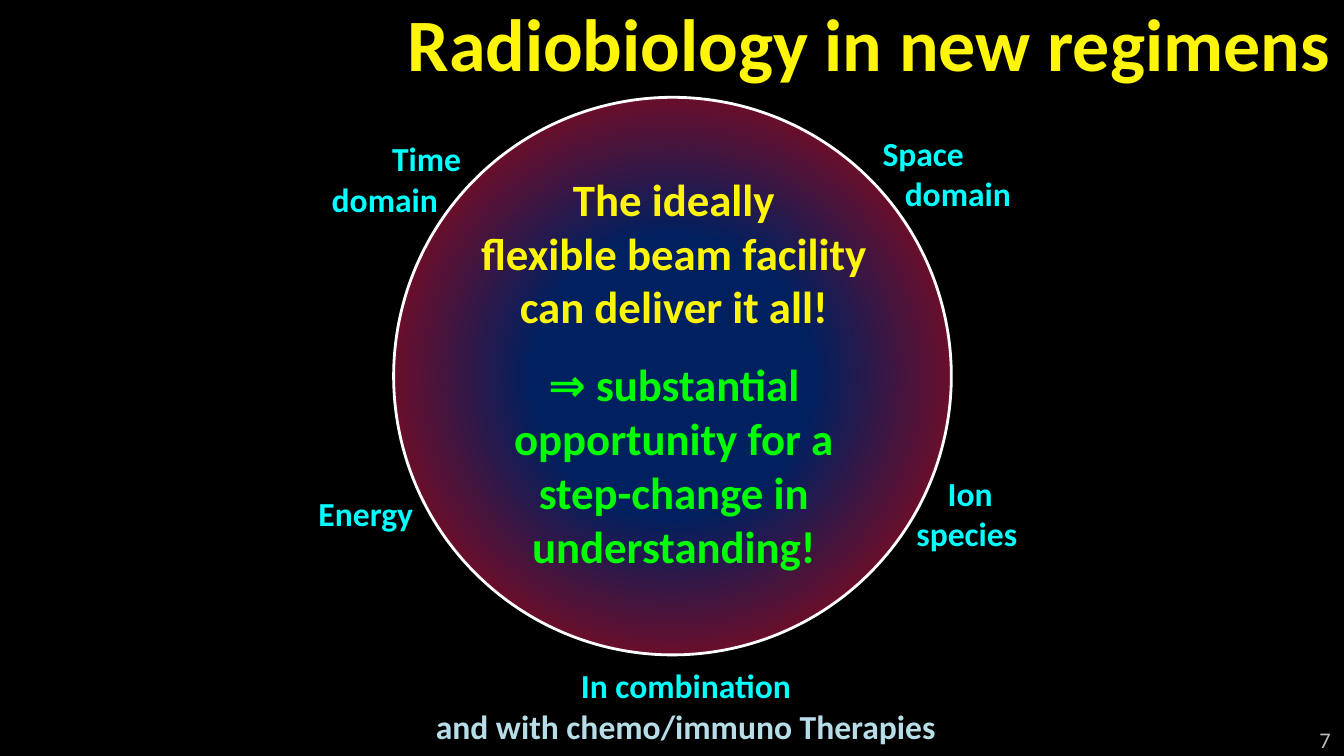
from pptx import Presentation
from pptx.dml.color import RGBColor
from pptx.enum.shapes import MSO_SHAPE as Shape
from pptx.enum.text import MSO_ANCHOR as Anchor, MSO_AUTO_SIZE as Auto, PP_ALIGN as Align
from pptx.oxml import parse_xml
from pptx.oxml.ns import nsdecls, qn
from pptx.util import Cm, Pt

YELLOW, CYAN, GREEN = "FFF50A", "00FFFF", "00FF00"
NAVY, RED, WHITE, BLUE = "002060", "C00000", "FFFFFF", "4B7EBC"
PALE, GREY, BLACK = "B7DEE8", "BFBFBF", "000000"


def color(code):
    return RGBColor.from_string(code)


def write(frame, rows, size, align=Align.LEFT, bold=True, gap=0):
    """Fill a frame with paragraphs given as (text, colour, left indent in cm)."""
    for i, (text, tint, indent) in enumerate(rows):
        para = frame.paragraphs[0] if i == 0 else frame.add_paragraph()
        para.text = text
        para.alignment = align
        para.space_before = Pt(gap if i else 0)
        if indent:
            para._p.get_or_add_pPr().set("marL", str(Cm(indent)))
        for run in para.runs:
            run.font.name = "Calibri"
            run.font.size = Pt(size)
            run.font.bold = bold
            run.font.color.rgb = color(tint)


def add_text(slide, box, rows, size, align=Align.LEFT, gap=0):
    frame = slide.shapes.add_textbox(*map(Cm, box)).text_frame
    frame.word_wrap = False
    frame.auto_size = Auto.SHAPE_TO_FIT_TEXT
    write(frame, rows, size, align, gap=gap)


def add_title(slide, box):
    title = slide.shapes.title
    title.left, title.top, title.width, title.height = map(Cm, box)
    frame = title.text_frame
    frame.auto_size = Auto.NONE
    frame.vertical_anchor = Anchor.MIDDLE
    write(frame, [("Radiobiology in new regimens", YELLOW, 0)], 39.6, Align.RIGHT)


def add_number(slide, box):
    frame = slide.shapes.add_textbox(*map(Cm, box)).text_frame
    frame.word_wrap = True
    frame.vertical_anchor = Anchor.MIDDLE
    write(frame, [("7", GREY, 0)], 12, Align.RIGHT, bold=False)


def add_circle(slide, box, line, width):
    circle = slide.shapes.add_shape(Shape.OVAL, *map(Cm, box))
    circle.shadow.inherit = False
    circle.fill.background()
    circle.line.color.rgb = color(line)
    circle.line.width = Pt(width)
    return circle


def add_glow(shape, stops):
    """Give a shape a radial gradient of (percent, colour) stops."""
    marks = "".join(
        f'<a:gs pos="{at * 1000}"><a:srgbClr val="{tint}"/></a:gs>' for at, tint in stops
    )
    grad = parse_xml(
        f'<a:gradFill {nsdecls("a")} rotWithShape="1"><a:gsLst>{marks}</a:gsLst>'
        '<a:path path="circle"><a:fillToRect l="50000" t="50000" r="50000" b="50000"/>'
        "</a:path></a:gradFill>"
    )
    props = shape._element.spPr
    props.replace(props.find(qn("a:noFill")), grad)


def add_disc(slide, box):
    left, top, *_ = box
    disc = add_circle(slide, box, BLUE, 0.75)
    add_glow(disc, [(0, NAVY), (35, NAVY), (100, RED)])
    message = [
        ("The ideally\nflexible beam facility\ncan deliver it all!", YELLOW, 0),
        ("⇒ substantial\nopportunity for a\nstep-change in\nunderstanding!", GREEN, 0),
    ]
    add_text(slide, (left + 1.27, top + 1.28, 8.05, 7.9), message, 24, Align.CENTER, gap=13)
    add_circle(slide, box, WHITE, 1.5)


def add_labels(slide, box):
    """Place the labels around the disc that fills the box."""
    left, top, *_ = box
    labels = [
        (-1.42, 0.65, 2.97, 1.8, Align.LEFT, [("Time", CYAN, 1.14), ("domain", CYAN, 0)]),
        (8.99, 0.55, 2.97, 1.8, Align.LEFT, [("Space", CYAN, 0), ("domain", CYAN, 0.42)]),
        (-1.67, 7.35, 2.31, 1.02, Align.LEFT, [("Energy", CYAN, 0)]),
        (9.63, 6.97, 2.44, 1.8, Align.LEFT, [("Ion", CYAN, 0.59), ("species", CYAN, 0)]),
        (0.51, 10.61, 10.03, 1.8, Align.CENTER,
         [("In combination", CYAN, 0), ("and with chemo/immuno Therapies", PALE, 0)]),
    ]
    for x, y, width, height, align, rows in labels:
        add_text(slide, (left + x, top + y, width, height), rows, 18, align)


def main():
    deck = Presentation()
    deck.slide_width, deck.slide_height = Cm(25.4), Cm(14.29)
    slide = deck.slides.add_slide(deck.slide_layouts[5])
    slide.background.fill.solid()
    slide.background.fill.fore_color.rgb = color(BLACK)

    disc = (7.44, 1.84, 10.54, 10.54)
    add_title(slide, (0, 0, 25.4, 1.57))
    add_number(slide, (19.48, 13.69, 5.92, 0.58))
    add_disc(slide, disc)
    add_labels(slide, disc)
    deck.save("out.pptx")


if __name__ == "__main__":
    main()
